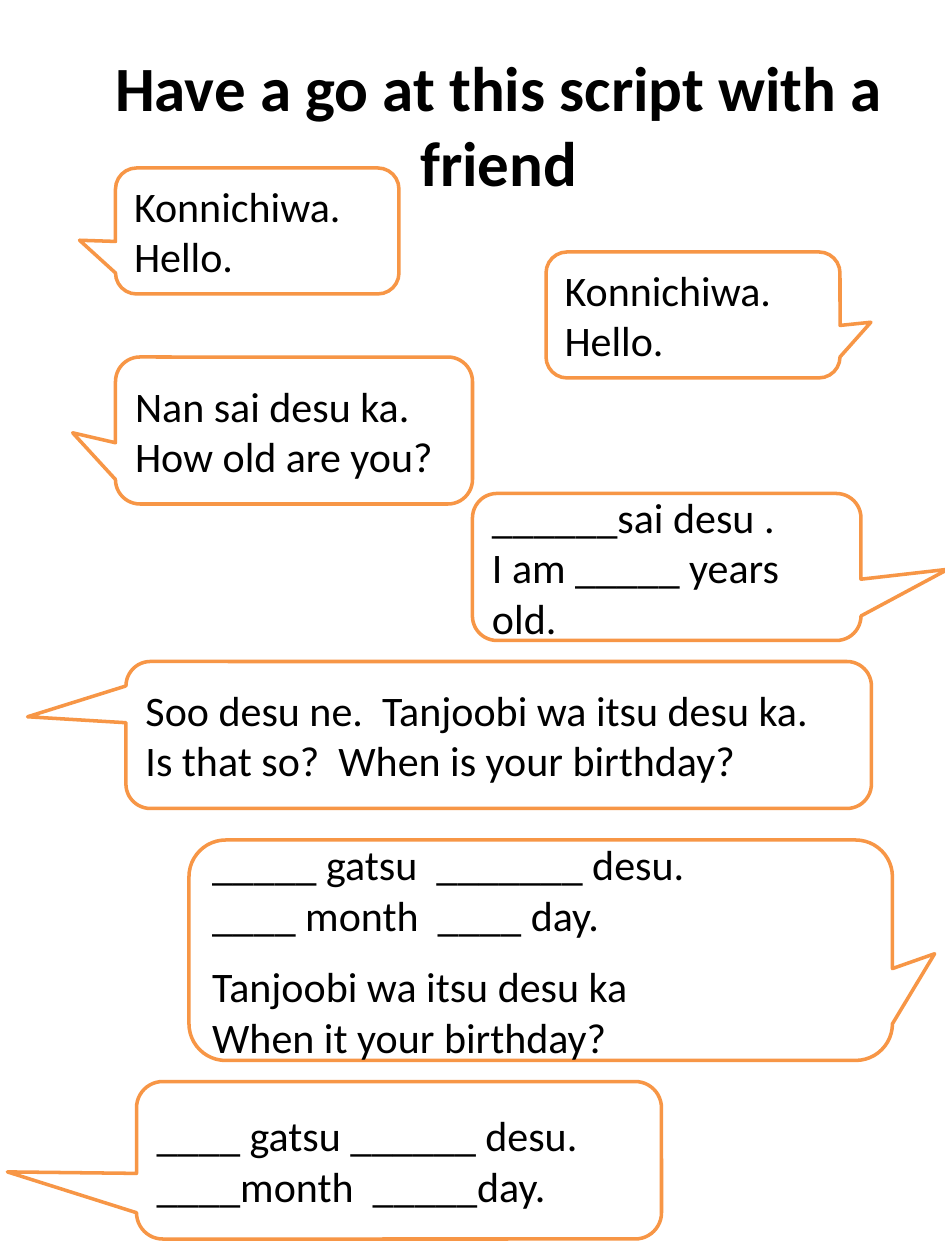
from dataclasses import dataclass

from lxml import etree
from pptx import Presentation
from pptx.dml.color import RGBColor
from pptx.enum import shapes, text
from pptx.slide import Slide
from pptx.util import Pt

BLACK = RGBColor(0x00, 0x00, 0x00)
WHITE = RGBColor(0xFF, 0xFF, 0xFF)
ORANGE = RGBColor(0xF7, 0x96, 0x46)
FONT = "Calibri"
BLANK_LAYOUT = 6
CORNER = 0.167
STANZA_GAP = 12


@dataclass(frozen=True)
class Bubble:
    """A speech bubble in points; the tail tip is a share of its size from its centre."""
    left: float
    top: float
    width: float
    height: float
    tail: tuple[float, float]
    stanzas: tuple[tuple[str, ...], ...]


BUBBLES = (
    Bubble(66, 96, 162, 72, (-0.627, 0.074), (("Konnichiwa.", "Hello."),)),
    Bubble(66, 204, 204, 84, (-0.62, 0.016), (("Nan sai desu ka.", "How old are you?"),)),
    Bubble(312, 144, 168, 72, (0.605, 0.058), (("Konnichiwa.", "Hello."),)),
    Bubble(270, 282, 222, 84, (0.724, 0.016),
           (("______sai desu .", "I am _____ years old."),)),
    Bubble(72, 378, 426, 84, (-0.632, -0.124),
           (("Soo desu ne.  Tanjoobi wa itsu desu ka.",
             "Is that so?  When is your birthday?"),)),
    Bubble(108, 480, 402, 126, (0.56, 0.016),
           (("_____ gatsu  _______ desu.", "____ month  ____ day."),
            ("Tanjoobi wa itsu desu ka", "When it your birthday?"))),
    Bubble(78, 618, 300, 90, (-0.746, 0.074),
           (("____ gatsu ______ desu.", "____month  _____day."),)),
)


def style_paragraph(paragraph, size: float, alignment, bold: bool = False) -> None:
    paragraph.alignment = alignment
    paragraph.font.name = FONT
    paragraph.font.size = Pt(size)
    paragraph.font.bold = bold
    paragraph.font.color.rgb = BLACK


def add_title(slide: Slide, title: str) -> None:
    frame = slide.shapes.add_textbox(Pt(30), Pt(24), Pt(510), Pt(51)).text_frame
    frame.word_wrap = True
    frame.text = title
    style_paragraph(frame.paragraphs[0], 36, text.PP_ALIGN.CENTER, bold=True)


def add_bubble(slide: Slide, bubble: Bubble) -> None:
    shape = slide.shapes.add_shape(
        shapes.MSO_SHAPE.ROUNDED_RECTANGULAR_CALLOUT,
        Pt(bubble.left), Pt(bubble.top), Pt(bubble.width), Pt(bubble.height))
    for index, value in enumerate((*bubble.tail, CORNER)):
        shape.adjustments[index] = value
    shape.shadow.inherit = False
    shape.fill.solid()
    shape.fill.fore_color.rgb = WHITE
    shape.line.color.rgb = ORANGE
    shape.line.width = Pt(2)

    frame = shape.text_frame
    frame.word_wrap = True
    frame.vertical_anchor = text.MSO_ANCHOR.MIDDLE
    frame.text = "\n".join(line for stanza in bubble.stanzas for line in stanza)
    for paragraph in frame.paragraphs:
        style_paragraph(paragraph, 24, text.PP_ALIGN.LEFT)
    start = 0
    for stanza in bubble.stanzas[:-1]:
        start += len(stanza)
        frame.paragraphs[start].space_before = Pt(STANZA_GAP)


def main() -> None:
    presentation = Presentation()
    presentation.slide_width, presentation.slide_height = Pt(540), Pt(720)
    slide = presentation.slides.add_slide(presentation.slide_layouts[BLANK_LAYOUT])
    add_title(slide, "Have a go at this script with a friend")
    for bubble in BUBBLES:
        add_bubble(slide, bubble)
    presentation.save("out.pptx")


if __name__ == "__main__":
    main()
